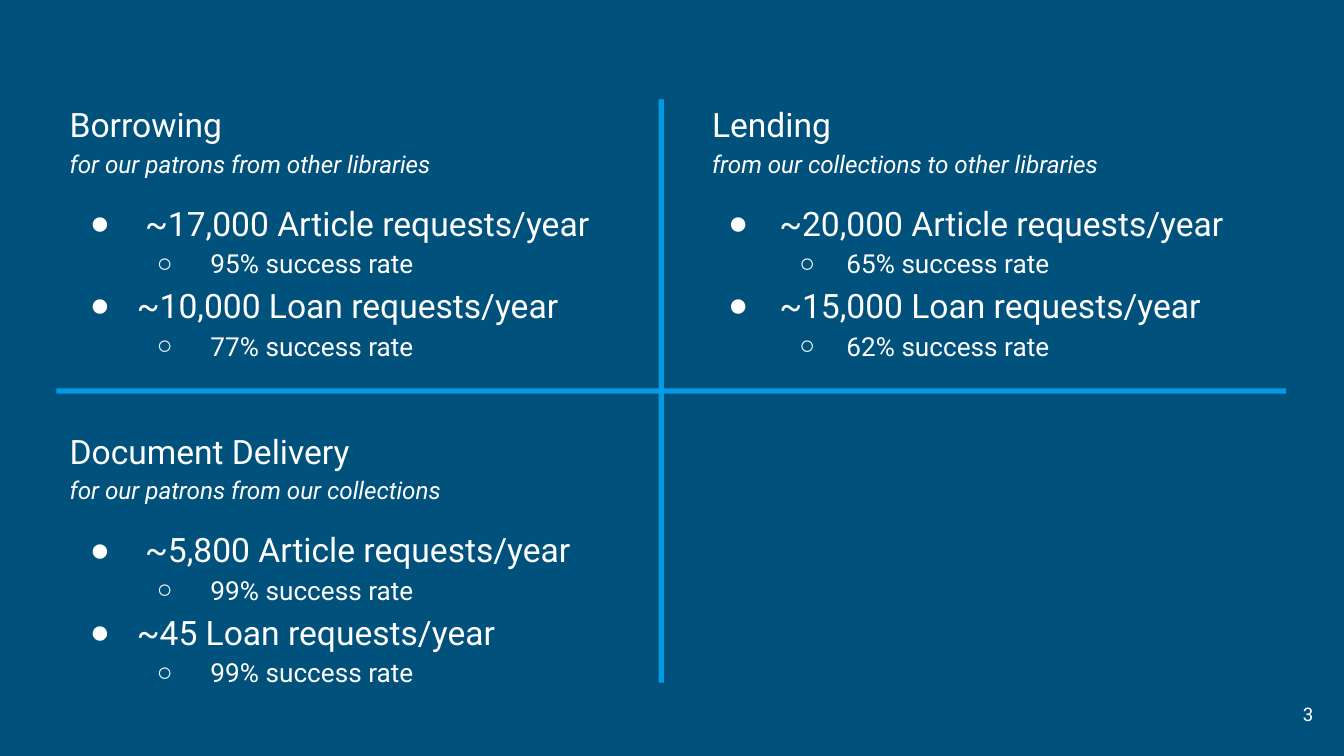
from lxml.etree import SubElement
from pptx import Presentation
from pptx.dml.color import RGBColor
from pptx.enum.shapes import MSO_SHAPE
from pptx.enum.text import MSO_ANCHOR, PP_ALIGN
from pptx.oxml.ns import qn
from pptx.util import Inches, Pt

NAVY = RGBColor(0x00, 0x51, 0x7C)
SKY = RGBColor(0x03, 0x9B, 0xE5)
WHITE = RGBColor(0xFF, 0xFF, 0xFF)
FONT = "Roboto"
BULLET_FONT = "Arial"
BULLETS = "●○"

LEFT, RIGHT = 0.42, 5.2
TOP, BOTTOM = 0.63, 3.06
PANEL_W, PANEL_H = 4.37, 2.05
BAR = 0.04

PANELS = [
    ((LEFT, TOP, PANEL_W, PANEL_H), "Borrowing",
     "for our patrons from other libraries", 0.35,
     [(0, " ~17,000 Article requests/year"), (1, " 95% success rate"),
      (0, "~10,000 Loan requests/year"), (1, " 77% success rate")]),
    ((RIGHT, TOP, PANEL_W, 1.97), "Lending",
     "from our collections to other libraries", 0.38,
     [(0, "~20,000 Article requests/year"), (1, "65% success rate"),
      (0, "~15,000 Loan requests/year"), (1, "62% success rate")]),
    ((LEFT, BOTTOM, PANEL_W, PANEL_H), "Document Delivery",
     "for our patrons from our collections", 0.35,
     [(0, " ~5,800 Article requests/year"), (1, " 99% success rate"),
      (0, "~45 Loan requests/year"), (1, " 99% success rate")]),
]


def add_text_frame(s, box):
    tf = s.shapes.add_textbox(*map(Inches, box)).text_frame
    tf.word_wrap = True
    tf.margin_left = tf.margin_right = Inches(0.1)
    tf.margin_top = tf.margin_bottom = Inches(0.1)
    return tf


def add_run(p, text, size, italic=False):
    r = p.add_run()
    r.text = text
    r.font.name = FONT
    r.font.size = Pt(size)
    r.font.italic = italic
    r.font.color.rgb = WHITE


def set_bullet(p, level, hanging):
    p.level = level
    pPr = p._p.get_or_add_pPr()
    pPr.set("marL", str(Inches(0.5 * (level + 1))))
    pPr.set("indent", str(-Inches(hanging)))
    color = SubElement(pPr, qn("a:buClr"))
    SubElement(color, qn("a:srgbClr"), val=str(WHITE))
    SubElement(pPr, qn("a:buFont"), typeface=BULLET_FONT)
    SubElement(pPr, qn("a:buChar"), char=BULLETS[level])


def add_panel(s, box, heading, subtitle, hanging, items):
    tf = add_text_frame(s, box)
    p = tf.paragraphs[0]
    add_run(p, heading, 18)
    p = tf.add_paragraph()
    add_run(p, subtitle, 13, italic=True)
    for i, (level, text) in enumerate(items):
        p = tf.add_paragraph()
        p.space_before = Pt(0 if i else 10)
        set_bullet(p, level, 0.35 if level else hanging)
        add_run(p, text, 14 if level else 18)
    for p in tf.paragraphs:
        p.line_spacing = 1.15


def add_bar(s, box, rotation=0):
    sp = s.shapes.add_shape(MSO_SHAPE.RECTANGLE, *map(Inches, box))
    sp.rotation = rotation
    sp.shadow.inherit = False
    sp.fill.solid()
    sp.fill.fore_color.rgb = SKY
    sp.line.fill.background()


def add_cross(s, box):
    x, y, w, h = box
    middle = y + (h - BAR) / 2
    add_bar(s, (x, middle, w, BAR))
    add_bar(s, (2.75, middle, h, BAR), rotation=90)


def add_page_number(s, box, number):
    tf = add_text_frame(s, box)
    tf.vertical_anchor = MSO_ANCHOR.MIDDLE
    p = tf.paragraphs[0]
    p.alignment = PP_ALIGN.RIGHT
    add_run(p, number, 10)


def main():
    prs = Presentation()
    prs.slide_width = Inches(10)
    prs.slide_height = prs.slide_width * 9 // 16
    s = prs.slides.add_slide(prs.slide_layouts[6])
    s.background.fill.solid()
    s.background.fill.fore_color.rgb = NAVY
    for panel in PANELS:
        add_panel(s, *panel)
    add_cross(s, (LEFT, 0.74, RIGHT + PANEL_W - LEFT, 4.34))
    add_page_number(s, (9.27, 5.1, 0.6, 0.43), "3")
    prs.save("out.pptx")


if __name__ == "__main__":
    main()
